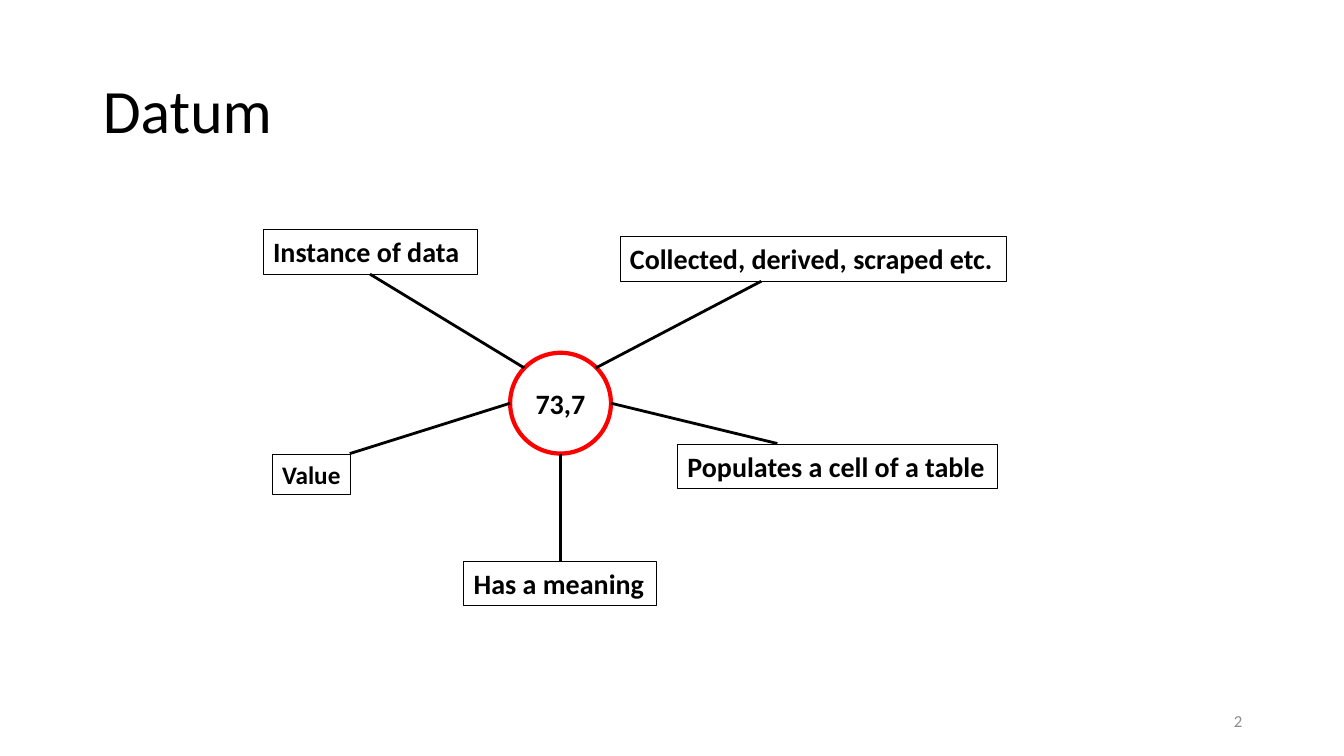
from dataclasses import dataclass
from typing import Any

from lxml import etree
from pptx import Presentation, util as u
from pptx.dml.color import RGBColor
from pptx.enum import shapes, text
from pptx.oxml.ns import qn

PX = 9144  # 100 px to the inch
BLACK = RGBColor(0, 0, 0)
RED = RGBColor(0xFF, 0, 0)
GREY = RGBColor(0x8C, 0x8C, 0x8C)
FONT = "Calibri"


@dataclass
class Box:
    label: str
    left: int
    top: int
    width: int
    height: int = 44
    size: int = 20


@dataclass
class Spoke:
    x1: int
    y1: int
    x2: int
    y2: int


TITLE = Box("Datum", 92, 40, 1150, 145, 44)
NUMBER = Box("2", 942, 695, 300, 40, 12)
DATUM = Box("73,7", 506, 350, 100, 100)
PROPERTIES = [
    Box("Value", 270, 451, 78, 40, 18),
    Box("Instance of data", 261, 228, 213),
    Box("Collected, derived, scraped etc.", 615, 235, 383),
    Box("Has a meaning", 460, 557, 191),
    Box("Populates a cell of a table", 672, 441, 317),
]
SPOKES = [
    Spoke(347, 450, 506, 400),
    Spoke(367, 272, 520, 365),
    Spoke(591, 365, 755, 279),
    Spoke(556, 557, 556, 450),
    Spoke(771, 440, 606, 400),
]


def set_all(target: Any, values: dict[str, Any]) -> None:
    for name, value in values.items():
        setattr(target, name, value)


def area(box: Box) -> list[int]:
    return [v * PX for v in (box.left, box.top, box.width, box.height)]


def write(sp: Any, box: Box, align: Any = text.PP_ALIGN.LEFT,
          anchor: Any = text.MSO_ANCHOR.MIDDLE, color: RGBColor = BLACK,
          bold: bool = False) -> Any:
    tf = sp.text_frame
    set_all(tf, {"word_wrap": True, "auto_size": text.MSO_AUTO_SIZE.NONE,
                 "vertical_anchor": anchor})
    p = tf.paragraphs[0]
    p.alignment = align
    r = p.add_run()
    r.text = box.label
    set_all(r.font, {"name": FONT, "size": u.Pt(box.size), "bold": bold})
    r.font.color.rgb = color
    return tf


def add_outline(slide: Any, kind: Any, box: Box, color: RGBColor, weight: float) -> Any:
    sp = slide.shapes.add_shape(kind, *area(box))
    sp.shadow.inherit = False
    sp.fill.background()
    sp.line.color.rgb = color
    sp.line.width = u.Pt(weight)
    return sp


def add_property(slide: Any, box: Box) -> None:
    sp = add_outline(slide, shapes.MSO_SHAPE.RECTANGLE, box, BLACK, 0.75)
    tf = write(sp, box, anchor=text.MSO_ANCHOR.TOP, bold=True)
    tf.margin_right = 0  # room for labels that fill their box


def add_spoke(slide: Any, spoke: Spoke) -> None:
    ends = [v * PX for v in (spoke.x1, spoke.y1, spoke.x2, spoke.y2)]
    line = slide.shapes.add_connector(shapes.MSO_CONNECTOR.STRAIGHT, *ends)
    line.line.color.rgb = BLACK
    line.line.width = u.Pt(2)
    etree.SubElement(line._element.spPr, qn("a:effectLst"))


def main() -> None:
    prs = Presentation()
    set_all(prs, {"slide_width": u.Inches(13.33), "slide_height": u.Inches(7.5)})
    slide = prs.slides.add_slide(prs.slide_layouts[5])

    title = slide.shapes.title
    set_all(title, dict(zip(("left", "top", "width", "height"), area(TITLE))))
    write(title, TITLE).paragraphs[0].line_spacing = 0.9
    write(slide.shapes.add_textbox(*area(NUMBER)), NUMBER,
          align=text.PP_ALIGN.RIGHT, color=GREY)

    circle = add_outline(slide, shapes.MSO_SHAPE.OVAL, DATUM, RED, 3)
    write(circle, DATUM, align=text.PP_ALIGN.CENTER, bold=True)
    for box in PROPERTIES:
        add_property(slide, box)
    for spoke in SPOKES:
        add_spoke(slide, spoke)

    prs.save("out.pptx")


if __name__ == "__main__":
    main()
